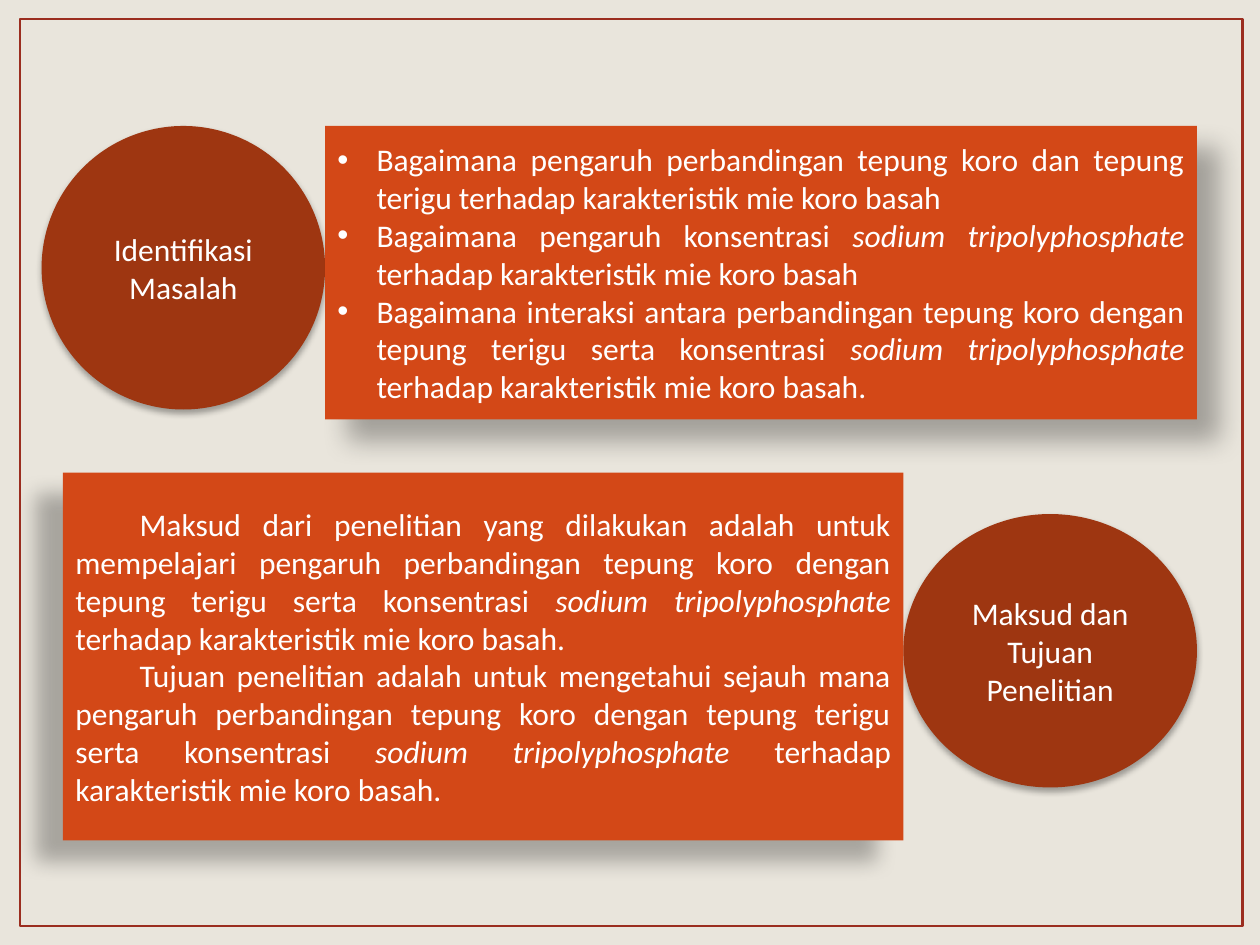
from lxml import etree
from pptx import Presentation
from pptx.dml.color import RGBColor
from pptx.enum.shapes import MSO_SHAPE
from pptx.enum.text import MSO_ANCHOR, PP_ALIGN
from pptx.oxml.ns import qn
from pptx.util import Inches, Pt

RECT, OVAL = MSO_SHAPE.RECTANGLE, MSO_SHAPE.OVAL
MIDDLE = MSO_ANCHOR.MIDDLE
CENTER, JUSTIFY = PP_ALIGN.CENTER, PP_ALIGN.JUSTIFY

COLORS = {
    "background": "E9E5DC",
    "frame": "9B2D1F",
    "circle": "9E3611",
    "panel": "D34817",
    "text": "FFFFFF",
    "shadow": "000000",
}
STPP = ("sodium tripolyphosphate ", True)
BASIS = "perbandingan tepung koro dengan tepung terigu serta konsentrasi "
RESULT = "terhadap karakteristik mie koro basah"

PROBLEMS = [
    [("Bagaimana pengaruh perbandingan tepung koro dan tepung terigu " + RESULT, False)],
    [("Bagaimana pengaruh konsentrasi ", False), STPP, (RESULT, False)],
    [("Bagaimana interaksi antara " + BASIS, False), STPP, (RESULT + ".", False)],
]
AIMS = [
    [(start + BASIS, False), STPP, (RESULT + ".", False)]
    for start in (
        "Maksud dari penelitian yang dilakukan adalah untuk mempelajari pengaruh ",
        "Tujuan penelitian adalah untuk mengetahui sejauh mana pengaruh ",
    )
]


def color(name):
    return RGBColor.from_string(COLORS[name])


class SlideBuilder:
    font = "Calibri"
    size = Pt(18)

    def __init__(self, slide):
        self.slide = slide
        fill = slide.background.fill
        fill.solid()
        fill.fore_color.rgb = color("background")

    def shape(self, kind, box, fill=None):
        sp = self.slide.shapes.add_shape(kind, *(Inches(v) for v in box))
        sp.shadow.inherit = False
        if fill:
            sp.fill.solid()
            sp.fill.fore_color.rgb = color(fill)
            sp.line.fill.background()
        else:
            sp.fill.background()
        return sp

    def frame(self, box):
        sp = self.shape(RECT, box)
        sp.line.color.rgb = color("frame")
        sp.line.width = Pt(1.5)

    def shadow(self, sp, alpha, blur, distance, angle):
        effects = sp._element.spPr.find(qn("a:effectLst"))
        outer = etree.SubElement(
            effects, qn("a:outerShdw"), blurRad=str(Pt(blur)), dist=str(Pt(distance)),
            dir=str(angle * 60000), algn="ctr", rotWithShape="0")
        rgb = etree.SubElement(outer, qn("a:srgbClr"), val=COLORS["shadow"])
        etree.SubElement(rgb, qn("a:alpha"), val=str(alpha * 1000))

    def text(self, sp, paragraphs, align, margin=0, indent=0, bullet=None):
        tf = sp.text_frame
        tf.word_wrap = True
        tf.vertical_anchor = MIDDLE
        for i, runs in enumerate(paragraphs):
            p = tf.paragraphs[0] if i == 0 else tf.add_paragraph()
            p.alignment = align
            pPr = p._p.get_or_add_pPr()
            pPr.set("marL", str(Inches(margin)))
            pPr.set("indent", str(Inches(indent)))
            if bullet:
                etree.SubElement(pPr, qn("a:buFont"), typeface="Arial")
                etree.SubElement(pPr, qn("a:buChar"), char=bullet)
            for words, italic in runs:
                r = p.add_run()
                r.text = words
                r.font.name = self.font
                r.font.size = self.size
                r.font.italic = italic
                r.font.color.rgb = color("text")

    def circle(self, box, label):
        sp = self.shape(OVAL, box, "circle")
        self.shadow(sp, 32, 3.5, 2.2, 90)
        self.text(sp, [[(label, False)]], CENTER)

    def panel(self, box, paragraphs, shadow, **layout):
        sp = self.shape(RECT, box, "panel")
        self.shadow(sp, *shadow)
        self.text(sp, paragraphs, JUSTIFY, **layout)


def main():
    prs = Presentation()
    prs.slide_width, prs.slide_height = Inches(10), Inches(7.5)
    s = SlideBuilder(prs.slides.add_slide(prs.slide_layouts[6]))
    s.frame((0.16, 0.15, 9.7, 7.2))
    s.circle((0.33, 1, 2.25, 2.25), "Identifikasi Masalah")
    s.panel((2.58, 1, 6.92, 2.33), PROBLEMS, (30, 15, 18, 45),
            margin=0.31, indent=-0.31, bullet="•")
    s.circle((7.17, 4.08, 2.33, 2.17), "Maksud dan Tujuan Penelitian")
    s.panel((0.5, 3.75, 6.67, 2.92), AIMS, (28, 11.8, 19.7, 141), indent=0.51)
    prs.save("out.pptx")


if __name__ == "__main__":
    main()
